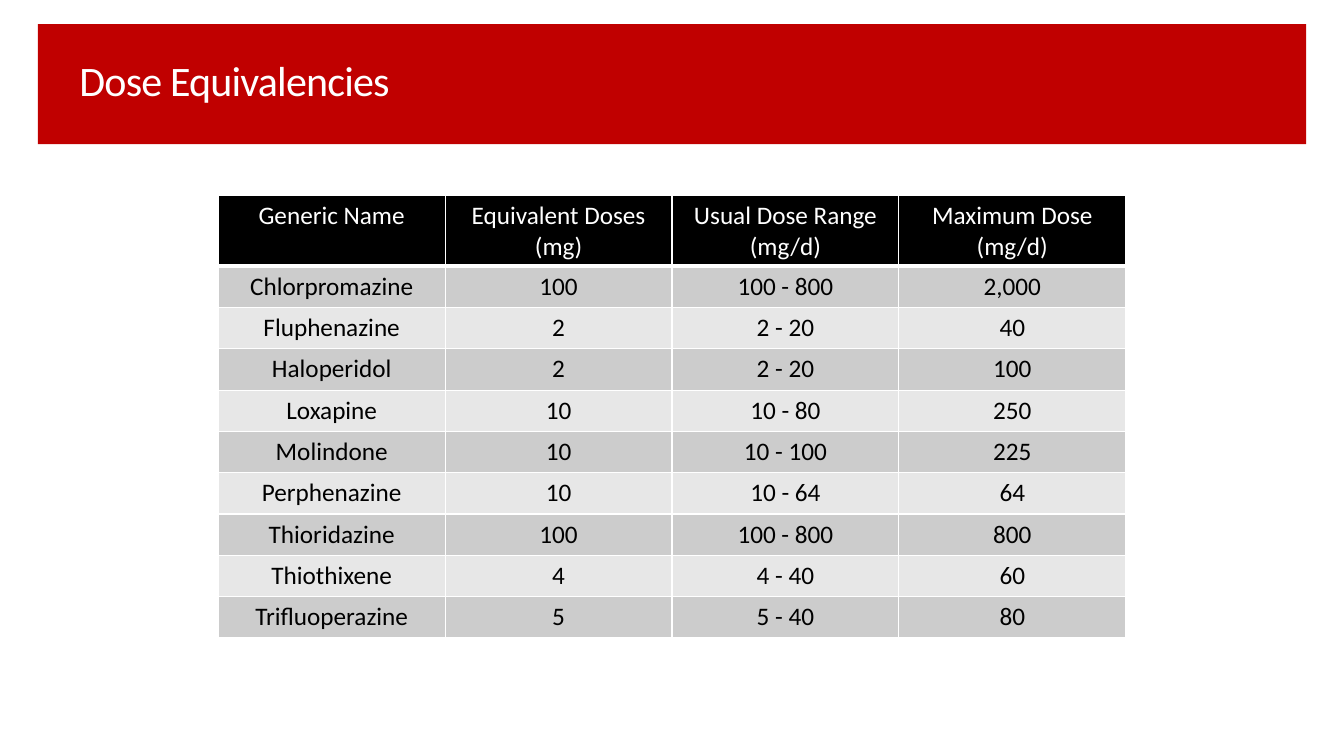
from lxml.etree import SubElement
from pptx import Presentation
from pptx.dml.color import RGBColor
from pptx.enum.shapes import MSO_SHAPE
from pptx.enum.text import MSO_ANCHOR, PP_ALIGN
from pptx.oxml.ns import qn
from pptx.util import Inches, Pt

TITLE = "Dose Equivalencies"
ROWS = [
    ("Generic Name", "Equivalent Doses (mg)", "Usual Dose Range (mg/d)", "Maximum Dose (mg/d)"),
    ("Chlorpromazine", "100", "100 - 800", "2,000"),
    ("Fluphenazine", "2", "2 - 20", "40"),
    ("Haloperidol", "2", "2 - 20", "100"),
    ("Loxapine", "10", "10 - 80", "250"),
    ("Molindone", "10", "10 - 100", "225"),
    ("Perphenazine", "10", "10 - 64", "64"),
    ("Thioridazine", "100", "100 - 800", "800"),
    ("Thiothixene", "4", "4 - 40", "60"),
    ("Trifluoperazine", "5", "5 - 40", "80"),
]

FONT = "Calibri"
RED = RGBColor(0xC0, 0x00, 0x00)
WHITE = RGBColor(0xFF, 0xFF, 0xFF)
BLACK = RGBColor(0x00, 0x00, 0x00)
BANDS = (RGBColor(0xE7, 0xE7, 0xE7), RGBColor(0xCC, 0xCC, 0xCC))

SLIDE_WIDTH, SLIDE_HEIGHT = 13.33, 7.5
BANNER_WIDTH, BANNER_HEIGHT, BANNER_TOP = 12.58, 1.19, 0.24
TITLE_BOX = (0.69, 0.33, 11.54, 0.99)
COLUMN_WIDTH, ROW_HEIGHT, TABLE_TOP = 2.25, 0.41, 1.94
COLUMN_COUNT = len(ROWS[0])


def style_text(paragraph, size, color):
    for run in paragraph.runs:
        run.font.name = FONT
        run.font.size = Pt(size)
        run.font.color.rgb = color


def add_banner(slide):
    left = (SLIDE_WIDTH - BANNER_WIDTH) / 2
    banner = slide.shapes.add_shape(
        MSO_SHAPE.RECTANGLE, Inches(left), Inches(BANNER_TOP),
        Inches(BANNER_WIDTH), Inches(BANNER_HEIGHT))
    banner.shadow.inherit = False
    banner.fill.solid()
    banner.fill.fore_color.rgb = RED
    banner.line.fill.background()


def add_title(slide):
    title = slide.shapes.add_textbox(*map(Inches, TITLE_BOX))
    text_frame = title.text_frame
    text_frame.word_wrap = True
    text_frame.vertical_anchor = MSO_ANCHOR.MIDDLE
    text_frame.text = TITLE
    paragraph = text_frame.paragraphs[0]
    paragraph.line_spacing = 0.9
    style_text(paragraph, 30, WHITE)
    paragraph.runs[0].font._element.set("spc", "-60")


def set_borders(cell, bottom_width):
    properties = cell._tc.get_or_add_tcPr()
    widths = {"a:lnL": 1, "a:lnR": 1, "a:lnT": 1, "a:lnB": bottom_width}
    for tag, width in widths.items():
        line = SubElement(properties, qn(tag), w=str(Pt(width)))
        fill = SubElement(line, qn("a:solidFill"))
        SubElement(fill, qn("a:srgbClr"), val=str(WHITE))


def add_dose_table(slide):
    width = COLUMN_WIDTH * COLUMN_COUNT
    table = slide.shapes.add_table(
        len(ROWS), COLUMN_COUNT, Inches((SLIDE_WIDTH - width) / 2), Inches(TABLE_TOP),
        Inches(width), Inches(ROW_HEIGHT * len(ROWS))).table
    for row_index, values in enumerate(ROWS):
        is_header = row_index == 0
        for column_index, value in enumerate(values):
            cell = table.cell(row_index, column_index)
            cell.text_frame.text = value
            paragraph = cell.text_frame.paragraphs[0]
            paragraph.alignment = PP_ALIGN.CENTER
            style_text(paragraph, 18, WHITE if is_header else BLACK)
            set_borders(cell, 3 if is_header else 1)
            cell.fill.solid()
            cell.fill.fore_color.rgb = BLACK if is_header else BANDS[row_index % 2]


def main():
    presentation = Presentation()
    presentation.slide_width = Inches(SLIDE_WIDTH)
    presentation.slide_height = Inches(SLIDE_HEIGHT)
    slide = presentation.slides.add_slide(presentation.slide_layouts[6])
    add_banner(slide)
    add_title(slide)
    add_dose_table(slide)
    presentation.save("out.pptx")


if __name__ == "__main__":
    main()
